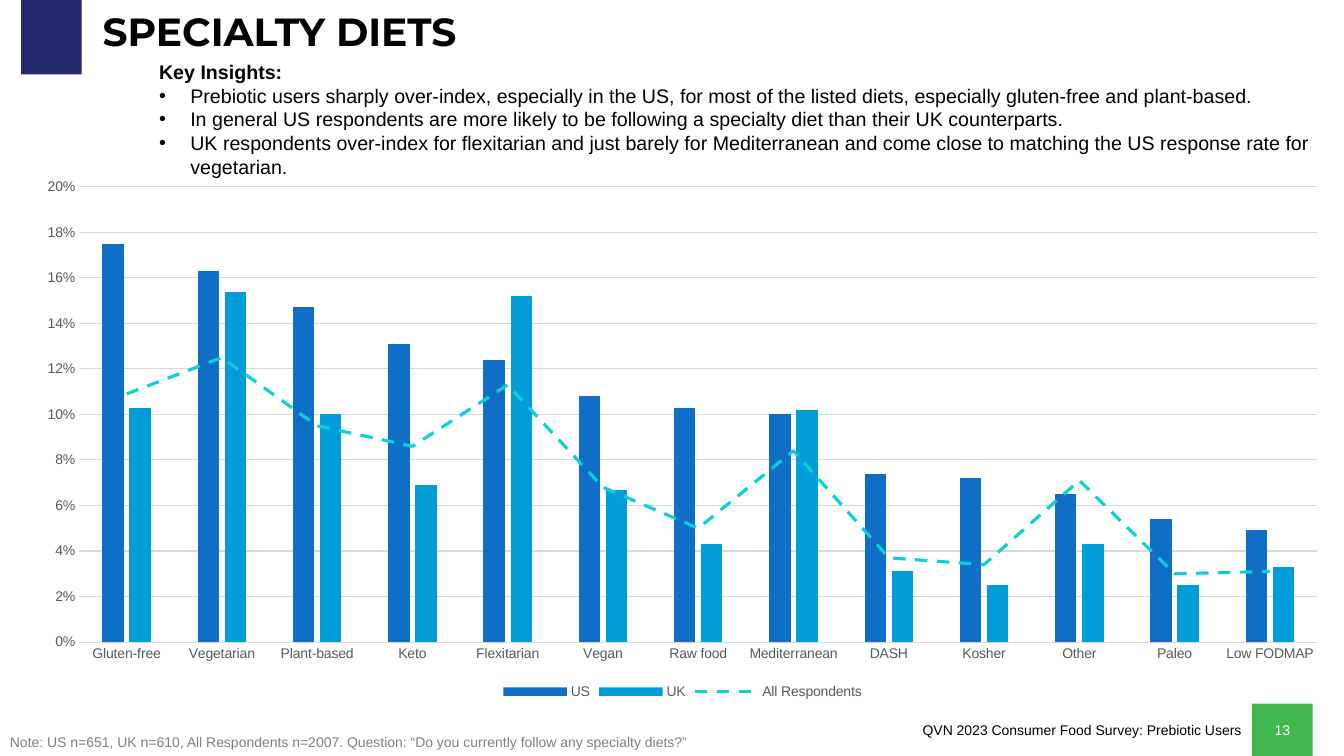
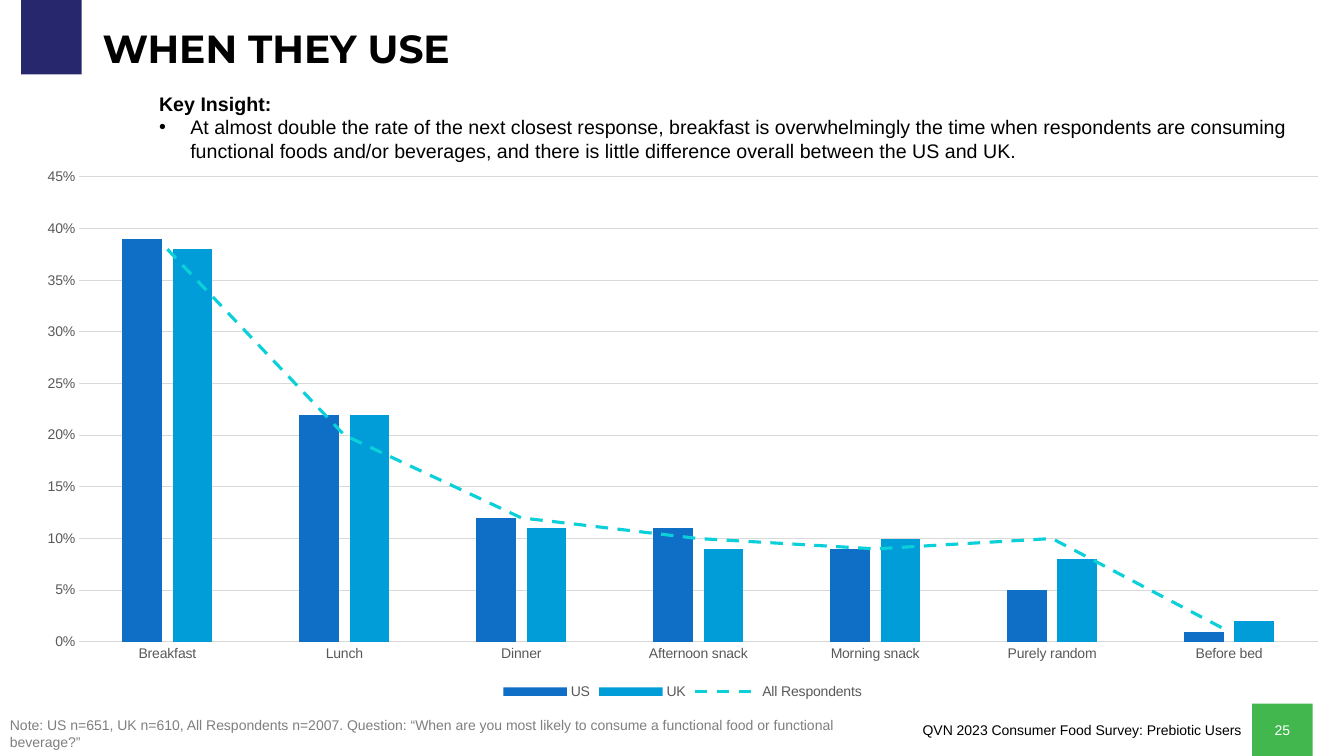
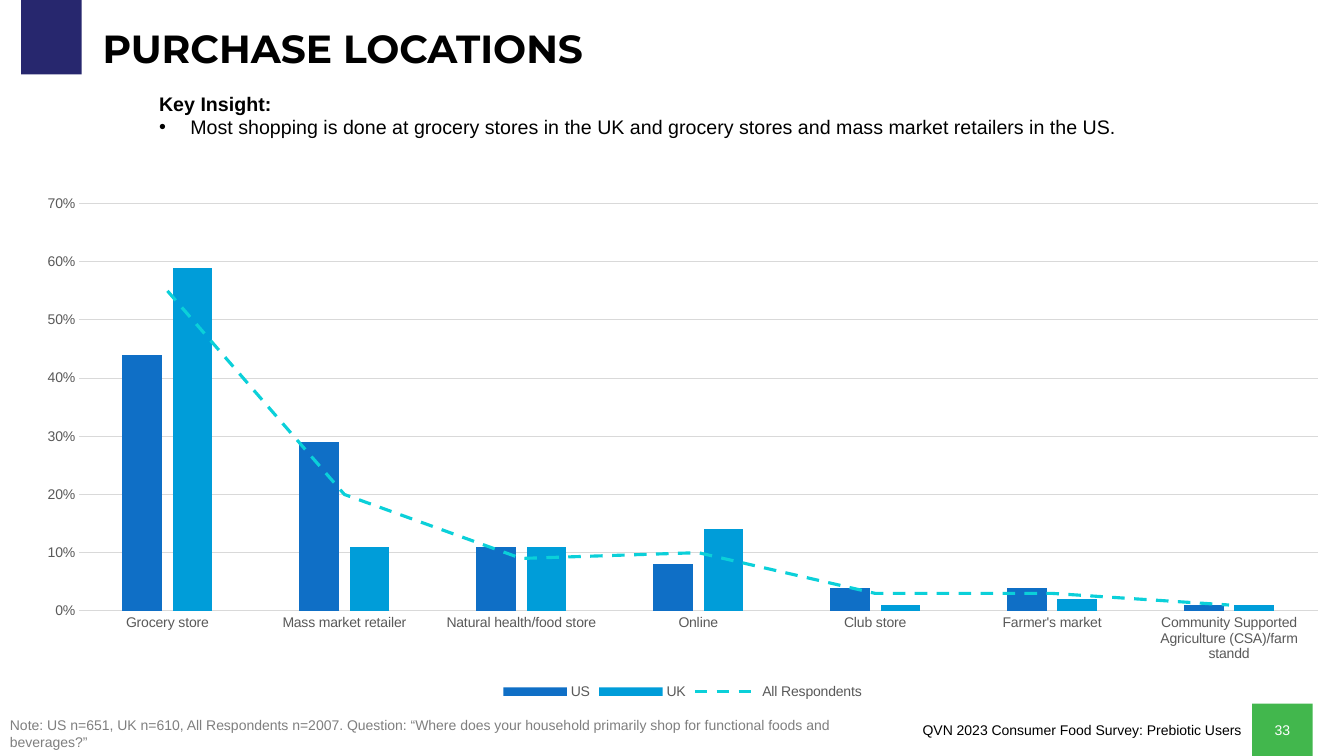
from lxml import etree
from pptx import Presentation
from pptx.chart.data import CategoryChartData as Data
from pptx.dml.color import RGBColor as RGB
from pptx.enum.chart import XL_CHART_TYPE as Kind, XL_LEGEND_POSITION as Legend
from pptx.enum.chart import XL_MARKER_STYLE as Mark, XL_TICK_MARK as Tick
from pptx.enum.dml import MSO_LINE as Dash
from pptx.enum.shapes import MSO_SHAPE as Shape
from pptx.enum.text import MSO_ANCHOR as Anchor, PP_ALIGN as Align
from pptx.oxml import parse_xml
from pptx.oxml.ns import nsdecls, qn
from pptx.util import Inches, Pt

WIDE, HIGH = Inches(13.33), Inches(7.5)
BLACK, WHITE = RGB(0, 0, 0), RGB(255, 255, 255)
NAVY, GREEN = RGB(0x27, 0x27, 0x6E), RGB(0x42, 0xB7, 0x4D)
GRAY, LABEL, RULE = RGB(0x7F, 0x7F, 0x7F), RGB(0x59, 0x59, 0x59), RGB(0xD9, 0xD9, 0xD9)
BLUE, SKY, TEAL = RGB(0x0F, 0x6F, 0xC6), RGB(0, 0x9D, 0xD9), RGB(0x0B, 0xD0, 0xD9)
BODY, HEAD = "Arial", "Montserrat"
FOOT = "QVN 2023 Consumer Food Survey: Prebiotic Users"
SAMPLE = "Note: US n=651, UK n=610, All Respondents n=2007. Question: "
BASE = 93.07  # lower edge of the chart and upper edge of the page number


def area(left, top, width, height):
    """Turn percentages of the slide into lengths."""
    return (int(WIDE * left / 100), int(HIGH * top / 100),
            int(WIDE * width / 100), int(HIGH * height / 100))


def style(font, size, color, name=BODY, bold=False):
    font.size, font.name, font.bold = Pt(size), name, bold
    font.color.rgb = color


def text(slide, box, words, size, color, name=BODY, bold=False):
    frame = slide.shapes.add_textbox(*area(*box)).text_frame
    frame.word_wrap = True
    para = frame.paragraphs[0]
    para.text = words
    style(para.font, size, color, name, bold)
    return frame


def block(slide, box, color):
    shape = slide.shapes.add_shape(Shape.RECTANGLE, *area(*box))
    shape.shadow.inherit = False
    shape.fill.solid()
    shape.fill.fore_color.rgb = color
    shape.line.fill.background()
    return shape


def bullet(para):
    props = para._p.get_or_add_pPr()
    props.set("marL", str(Inches(0.31)))
    props.set("indent", str(-Inches(0.31)))
    color = etree.SubElement(props, qn("a:buClr"))
    etree.SubElement(color, qn("a:srgbClr"), val=str(BLACK))
    etree.SubElement(props, qn("a:buFont"), typeface=BODY)
    etree.SubElement(props, qn("a:buChar"), char="•")


def frame(slide, page):
    """Corner tab, footer and page number."""
    block(slide, (1.58, -0.67, 4.5, 10.53), NAVY)
    foot = text(slide, (59.41, 94.8, 33.68, 3.6), FOOT, 10, BLACK)
    foot.paragraphs[0].alignment = Align.RIGHT
    tile = block(slide, (93.17, BASE, 4.5, 100 - BASE), GREEN).text_frame
    tile.vertical_anchor = Anchor.MIDDLE
    para = tile.paragraphs[0]
    para.text, para.alignment = str(page), Align.CENTER
    style(para.font, 10, WHITE)


def title(slide, top, words):
    head = text(slide, (6.9, top, 86.27, 6.67), words, 28, BLACK, HEAD, True)
    head.vertical_anchor = Anchor.MIDDLE
    head.paragraphs[0].line_spacing = 0.9


def insight(slide, top, height, lead, points):
    body = text(slide, (11.1, top, 87.92, height), lead, 14, BLACK, bold=True)
    for point in points:
        para = body.add_paragraph()
        bullet(para)
        para.text = point
        style(para.font, 14, BLACK)


def note(slide, lines, ask):
    height = 1.33 + 2.27 * lines
    text(slide, (0, 100 - height, 67.52, height), f"{SAMPLE}“{ask}”", 10, GRAY)


def trend(chart):
    """Move the last bar series to a line plot on the same axes."""
    bars = chart.plots[0]._element
    ser = bars.findall(qn("c:ser"))[-1]
    for flag in ser.findall(qn("c:invertIfNegative")):
        ser.remove(flag)
    plot = parse_xml(f'<c:lineChart {nsdecls("c")}><c:grouping val="standard"/>'
                     '<c:varyColors val="0"/></c:lineChart>')
    plot.append(ser)
    etree.SubElement(plot, qn("c:marker"), val="1")
    for axis in bars.findall(qn("c:axId")):
        etree.SubElement(plot, qn("c:axId"), val=axis.get("val"))
    bars.addnext(plot)
    line = chart.plots[1].series[0]
    line.smooth, line.marker.style = False, Mark.NONE
    line.format.line.color.rgb = TEAL
    line.format.line.width = Pt(2.25)
    line.format.line.dash_style = Dash.DASH


def graph(slide, top, peak, step, rows):
    """Clustered bars for both countries, dashed line for everyone."""
    names, us, uk, both = zip(*rows)
    data = Data(number_format="0%")
    data.categories = names
    for name, vals in (("US", us), ("UK", uk), ("All Respondents", both)):
        data.add_series(name, [val / 100 for val in vals])
    box = area(1.58, top, 98.42, BASE - top)
    chart = slide.shapes.add_chart(Kind.COLUMN_CLUSTERED, *box, data).chart
    style(chart.font, 10, BLACK)
    clear = parse_xml(f'<c:spPr {nsdecls("c", "a")}><a:noFill/>'
                      '<a:ln><a:noFill/></a:ln></c:spPr>')
    chart._chartSpace.find(qn("c:chart")).addnext(clear)
    chart.has_title = False
    chart.has_legend = True
    chart.legend.position = Legend.BOTTOM
    chart.legend.include_in_layout = False
    style(chart.legend.font, 10, LABEL)

    # Bars and line
    plot = chart.plots[0]
    plot.gap_width, plot.overlap, plot.vary_by_categories = 219, -27, False
    for ser, color in zip(plot.series, (BLUE, SKY)):
        ser.format.fill.solid()
        ser.format.fill.fore_color.rgb = color
    trend(chart)

    # Axes
    cat, val = chart.category_axis, chart.value_axis
    for axis in (cat, val):
        axis.major_tick_mark = axis.minor_tick_mark = Tick.NONE
        style(axis.tick_labels.font, 10, LABEL)
    val.minimum_scale, val.maximum_scale, val.major_unit = 0, peak, step
    val.tick_labels.number_format = "0%"
    val.tick_labels.number_format_is_linked = False
    val.format.line.fill.background()
    for rule in (cat.format.line, val.major_gridlines.format.line):
        rule.color.rgb, rule.width = RULE, Pt(0.75)


# Rows: category, US, UK, all respondents (percent)
DIETS = [
    ("Gluten-free", 17.5, 10.3, 10.9), ("Vegetarian", 16.3, 15.4, 12.5),
    ("Plant-based", 14.7, 10, 9.5), ("Keto", 13.1, 6.9, 8.6),
    ("Flexitarian", 12.4, 15.2, 11.3), ("Vegan", 10.8, 6.7, 6.8),
    ("Raw food", 10.3, 4.3, 5), ("Mediterranean", 10, 10.2, 8.4),
    ("DASH", 7.4, 3.1, 3.7), ("Kosher", 7.2, 2.5, 3.4),
    ("Other", 6.5, 4.3, 7.1), ("Paleo", 5.4, 2.5, 3),
    ("Low FODMAP", 4.9, 3.3, 3.1),
]
TIMES = [
    ("Breakfast", 39, 38, 38), ("Lunch", 22, 22, 20), ("Dinner", 12, 11, 12),
    ("Afternoon snack", 11, 9, 10), ("Morning snack", 9, 10, 9),
    ("Purely random", 5, 8, 10), ("Before bed", 1, 2, 1),
]
SHOPS = [
    ("Grocery store", 44, 59, 55), ("Mass market retailer", 29, 11, 20),
    ("Natural health/food store", 11, 11, 9), ("Online", 8, 14, 10),
    ("Club store", 4, 1, 3), ("Farmer's market", 4, 2, 3),
    ("Community Supported Agriculture (CSA)/farm standd", 1, 1, 1),
]
PAGES = [
    dict(page=13, title=(1.07, "SPECIALTY DIETS"),
         insight=(7.33, 26.53, "Key Insights:", [
             "Prebiotic users sharply over-index, especially in the US, for most of the "
             "listed diets, especially gluten-free and plant-based.",
             "In general US respondents are more likely to be following a specialty diet "
             "than their UK counterparts.",
             "UK respondents over-index for flexitarian and just barely for Mediterranean "
             "and come close to matching the US response rate for vegetarian."]),
         note=(1, "Do you currently follow any specialty diets?"),
         graph=(22.27, 0.2, 0.02, DIETS)),
    dict(page=25, title=(3.33, "WHEN THEY USE"),
         insight=(11.47, 20.13, "Key Insight:", [
             "At almost double the rate of the next closest response, breakfast is "
             "overwhelmingly the time when respondents are consuming functional foods "
             "and/or beverages, and there is little difference overall between the US "
             "and UK."]),
         note=(2, "When are you most likely to consume a functional food or functional "
                  "beverage?"),
         graph=(20.93, 0.45, 0.05, TIMES)),
    dict(page=33, title=(3.33, "PURCHASE LOCATIONS"),
         insight=(11.47, 17.07, "Key Insight:", [
             "Most shopping is done at grocery stores in the UK and grocery stores and "
             "mass market retailers in the US."]),
         note=(2, "Where does your household primarily shop for functional foods and "
                  "beverages?"),
         graph=(24.53, 0.7, 0.1, SHOPS)),
]


def main():
    deck = Presentation()
    deck.slide_width, deck.slide_height = WIDE, HIGH
    for page in PAGES:
        slide = deck.slides.add_slide(deck.slide_layouts[6])
        frame(slide, page["page"])
        title(slide, *page["title"])
        insight(slide, *page["insight"])
        note(slide, *page["note"])
        graph(slide, *page["graph"])
    deck.save("out.pptx")


if __name__ == "__main__":
    main()
